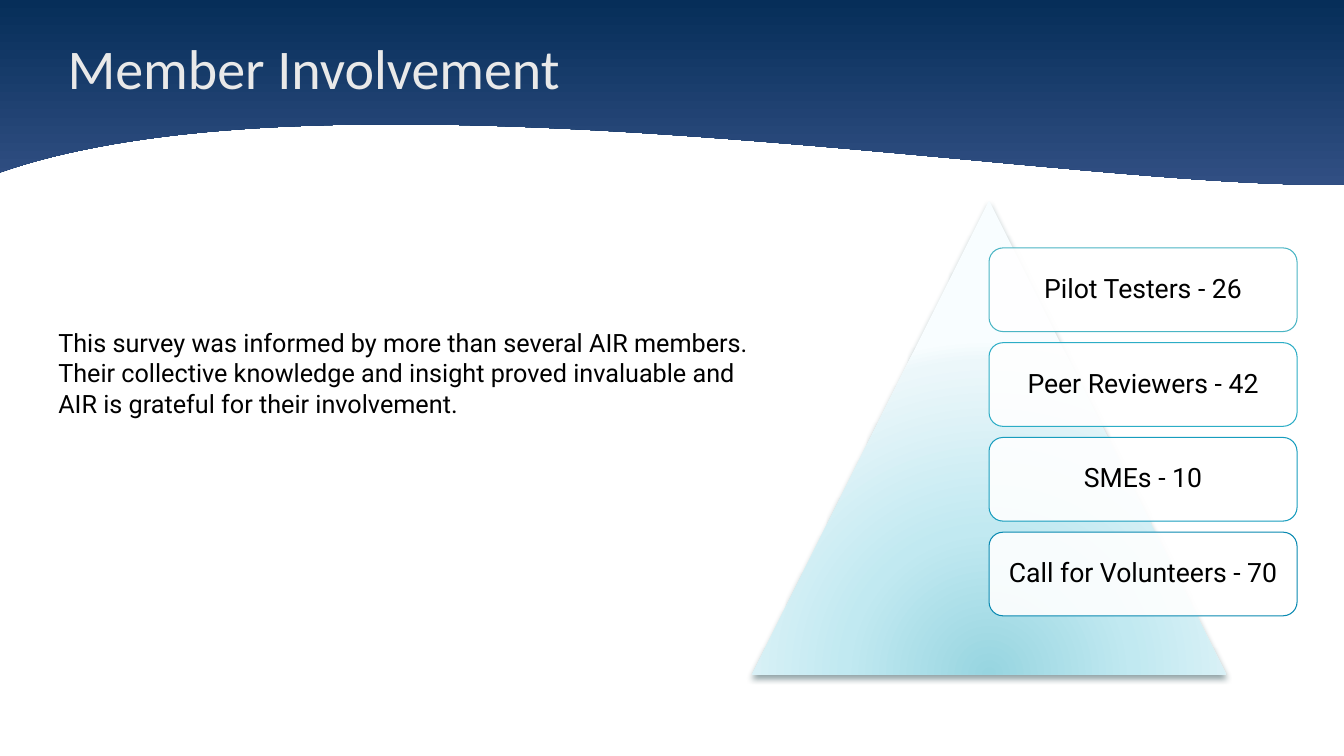
from lxml import etree
from pptx import Presentation
from pptx.dml.color import RGBColor
from pptx.enum import shapes, text
from pptx.oxml import parse_xml
from pptx.oxml.ns import nsdecls, qn
from pptx.util import Inches, Pt

GROUPS = [
    ("Pilot Testers - 26", "4AB5C4"),
    ("Peer Reviewers - 42", "2CADC6"),
    ("SMEs - 10", "189DBE"),
    ("Call for Volunteers - 70", "0989B1"),
]
GLOW = [(0, "97D5E0"), (43, "C1E9F1"), (93, "ECF7FA"), (100, "F8FDFF")]


def color(value):
    return RGBColor.from_string(value)


def write(shape, words, size, font="Roboto", ink="000000", align=text.PP_ALIGN.LEFT,
          anchor=text.MSO_ANCHOR.TOP, insets=(0.1, 0.05, 0.1, 0.05), spacing=None):
    frame = shape.text_frame
    frame.word_wrap = True
    frame.auto_size = text.MSO_AUTO_SIZE.NONE
    frame.vertical_anchor = anchor
    (frame.margin_left, frame.margin_top,
     frame.margin_right, frame.margin_bottom) = map(Inches, insets)
    para = frame.paragraphs[0]
    para.alignment = align
    para.line_spacing = spacing
    span = para.add_run()
    span.text = words
    span.font.name = font
    span.font.size = Pt(size)
    span.font.color.rgb = color(ink)


def place(shape, left, top, width, height):
    shape.left, shape.top = Inches(left), Inches(top)
    shape.width, shape.height = Inches(width), Inches(height)


def bezier(points, steps=80):
    """Return points along a cubic curve, without its start."""
    curve = []
    for step in range(1, steps + 1):
        t = step / steps
        weights = ((1 - t) ** 3, 3 * t * (1 - t) ** 2, 3 * t * t * (1 - t), t ** 3)
        curve.append(tuple(sum(w * p[axis] for w, p in zip(weights, points))
                           for axis in (0, 1)))
    return curve


def add_header(page, left, top, width, height):
    """Draw the wave banner behind the title and fill in the title."""
    right = left + width
    edge = [(right, top + height), (right - 2.66, top + 1.9),
            (left + 3.37, top + 0.54), (left, top + 1.71)]
    outline = [(right, top), edge[0]] + bezier(edge)
    builder = page.shapes.build_freeform(Inches(left), Inches(top))
    builder.add_line_segments([(Inches(x), Inches(y)) for x, y in outline])
    wave = builder.convert_to_shape()
    wave.shadow.inherit = False
    wave.line.fill.background()
    wave.fill.gradient()
    wave.fill.gradient_angle = 270
    for stop, position, shade in zip(wave.fill.gradient_stops, (0, 1), ("062E59", "314F83")):
        stop.position = position
        stop.color.rgb = color(shade)
    page.shapes._spTree.insert(2, wave._element)

    title = page.shapes.title
    place(title, left + 0.67, top + 0.07, 12, 0.93)
    write(title, "Member Involvement", 40, font="Calibri", ink="E9E9E9",
          anchor=text.MSO_ANCHOR.BOTTOM, insets=(0, 0.05, 0, 0))


def add_message(page, left, top, width, height):
    box = page.shapes.add_textbox(*map(Inches, (left, top, width, height)))
    write(box, "This survey was informed by more than several AIR members. Their collective "
               "knowledge and insight proved invaluable and AIR is grateful for their "
               "involvement.", 18)


def add_glow(shape):
    """Give a shape a radial gradient centred below it, and a soft shadow."""
    stops = "".join(f'<a:gs pos="{position * 1000}"><a:srgbClr val="{shade}"/></a:gs>'
                    for position, shade in GLOW)
    gradient = parse_xml(
        f'<a:gradFill {nsdecls("a")} rotWithShape="1"><a:gsLst>{stops}</a:gsLst>'
        '<a:path path="circle"><a:fillToRect l="50000" t="130000" r="50000" b="-30000"/>'
        '</a:path></a:gradFill>')
    shape.fill.gradient()
    properties = shape._element.spPr
    properties.replace(properties.find(qn("a:gradFill")), gradient)
    shape.shadow.inherit = False
    shadow = parse_xml(
        f'<a:outerShdw {nsdecls("a")} blurRad="{Pt(4.5)}" dist="{Pt(3)}" dir="5400000" '
        'rotWithShape="0"><a:srgbClr val="194046"><a:alpha val="48000"/></a:srgbClr>'
        '</a:outerShdw>')
    properties.find(qn("a:effectLst")).append(shadow)


def add_pyramid(page, left, top, size):
    """Draw the triangle with a column of cards starting at its centre line."""
    triangle = page.shapes.add_shape(shapes.MSO_SHAPE.ISOSCELES_TRIANGLE,
                                     *map(Inches, (left, top, size, size)))
    triangle.line.fill.background()
    add_glow(triangle)

    card_width, card_height, pitch = size * 0.65, 0.83, 0.94
    for row, (label, outline) in enumerate(GROUPS):
        card = page.shapes.add_shape(
            shapes.MSO_SHAPE.ROUNDED_RECTANGLE, Inches(left + size / 2),
            Inches(top + 0.47 + row * pitch), Inches(card_width), Inches(card_height))
        card.shadow.inherit = False
        card.fill.solid()
        card.fill.fore_color.rgb = color("FFFFFF")
        white = card._element.spPr.find(qn("a:solidFill"))[0]
        etree.SubElement(white, qn("a:alpha"), val="90000")
        card.line.color.rgb = color(outline)
        card.line.width = Pt(0.75)
        write(card, label, 19, align=text.PP_ALIGN.CENTER, anchor=text.MSO_ANCHOR.MIDDLE,
              insets=(0.08, 0.08, 0.08, 0.08), spacing=0.9)


def main():
    deck = Presentation()
    deck.slide_width, deck.slide_height = Inches(13.33), Inches(7.5)
    page = deck.slides.add_slide(deck.slide_layouts[5])
    add_header(page, 0, 0, 13.33, 1.83)
    add_pyramid(page, 7.46, 1.99, 4.7)
    add_message(page, 0.48, 3.2, 7.09, 1.31)
    deck.save("out.pptx")


if __name__ == "__main__":
    main()
